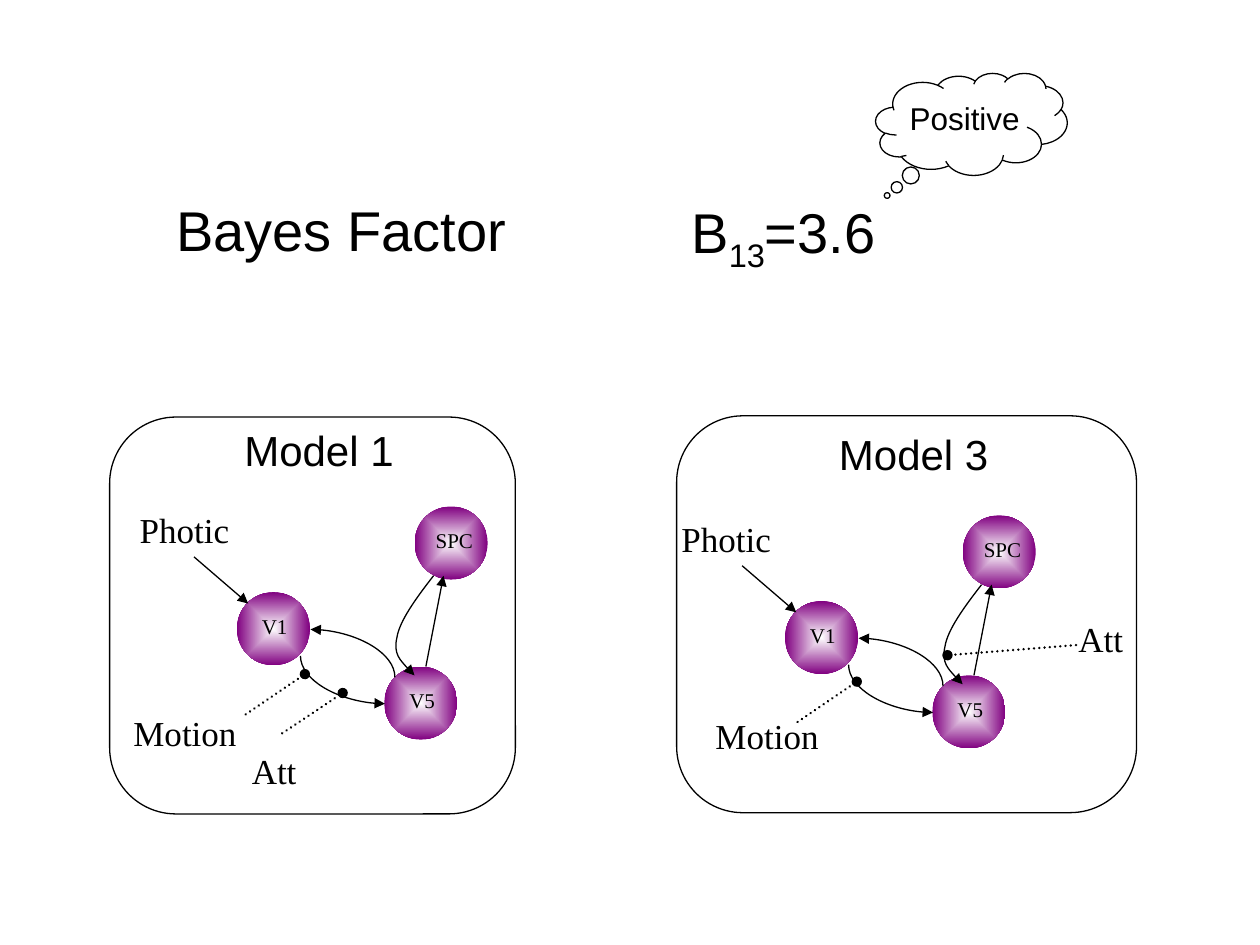
from lxml.etree import SubElement
from pptx import Presentation
from pptx.dml.color import RGBColor
from pptx.enum.dml import MSO_LINE
from pptx.enum.shapes import MSO_CONNECTOR, MSO_SHAPE
from pptx.enum.text import MSO_ANCHOR, MSO_AUTO_SIZE, PP_ALIGN
from pptx.oxml.ns import qn
from pptx.util import Inches, Pt

BLACK = RGBColor(0x00, 0x00, 0x00)
WHITE = RGBColor(0xFF, 0xFF, 0xFF)
PURPLE = RGBColor(0x80, 0x00, 0x80)
SERIF = "Times New Roman"

# Node name: left, top, label left offset, label width
NODES = {
    "V1": (1.88, 4.70, 0.10, 0.42),
    "V5": (3.05, 5.29, 0.10, 0.42),
    "SPC": (3.29, 4.02, 0.07, 0.53),
}
NODE_SIZE = 0.58
ARROWS = [(3.38, 5.29, 3.52, 4.57), (1.54, 4.42, 1.97, 4.79)]
# Unrotated left and top, rotation of the curves between V1 and V5
CURVES = [(2.53, 5.06, 270), (2.61, 4.85, 90)]
# Start point and Bezier points of the curve from SPC to V5
SPC_CURVE = [(3.44, 4.57), (3.30, 4.75), (3.17, 4.93), (3.15, 5.06),
             (3.12, 5.19), (3.21, 5.28), (3.29, 5.36)]

MODELS = [
    {
        "offset": (0, 0),
        "panel": (0.87, 3.31, 3.22, 3.15),
        "title": ("Model 1", 1.84, 3.32),
        "inputs": [("Motion", 0.96, 5.60, 1.02), ("Photic", 1.01, 3.99, 0.91),
                   ("Att", 1.90, 5.90, 0.56)],
        "modulators": [(1.95, 5.67, 2.42, 5.35), (2.24, 5.82, 2.72, 5.50)],
    },
    {
        "offset": (4.35, 0.07),
        "panel": (5.37, 3.30, 3.65, 3.15),
        "title": ("Model 3", 6.56, 3.35),
        "inputs": [("Motion", 5.58, 5.62, 1.02), ("Photic", 5.31, 4.06, 0.91),
                   ("Att", 8.46, 4.85, 0.56)],
        "modulators": [(6.33, 5.73, 6.80, 5.41), (8.54, 5.12, 7.52, 5.20)],
    },
]

presentation = Presentation()
presentation.slide_width = Inches(10)
presentation.slide_height = Inches(7.5)
slide = presentation.slides.add_slide(presentation.slide_layouts[5])
shapes = slide.shapes


def add_label(text, left, top, width, height, size, font="Arial"):
    label = shapes.add_textbox(Inches(left), Inches(top), Inches(width), Inches(height))
    label.text_frame.word_wrap = False
    label.text_frame.auto_size = MSO_AUTO_SIZE.SHAPE_TO_FIT_TEXT
    paragraph = label.text_frame.paragraphs[0]
    paragraph.text = text
    paragraph.font.size = Pt(size)
    paragraph.font.name = font
    paragraph.font.color.rgb = BLACK
    return label


def style_line(shape, head=None, width=0.75):
    shape.line.color.rgb = BLACK
    shape.line.width = Pt(width)
    properties = shape._element.spPr
    if head:
        SubElement(properties.find(qn("a:ln")), qn("a:tailEnd"), type=head)
    if properties.find(qn("a:effectLst")) is None:
        SubElement(properties, qn("a:effectLst"))


# Slide title
title = shapes.title
title.left, title.top = Inches(1.3), Inches(1.5)
title.width, title.height = Inches(4.18), Inches(0.63)
title.text_frame.text = "Bayes Factor"
title.text_frame.vertical_anchor = MSO_ANCHOR.TOP
title.text_frame.auto_size = MSO_AUTO_SIZE.SHAPE_TO_FIT_TEXT
title.text_frame.paragraphs[0].alignment = PP_ALIGN.LEFT
title_font = title.text_frame.paragraphs[0].runs[0].font
title_font.size = Pt(32)
title_font.name = "Arial"
title_font.color.rgb = BLACK

for model in MODELS:
    dx, dy = model["offset"]

    # Brain regions
    for name, (left, top, label_left, label_width) in NODES.items():
        node = shapes.add_shape(MSO_SHAPE.OVAL, Inches(left + dx), Inches(top + dy),
                                Inches(NODE_SIZE), Inches(NODE_SIZE))
        node.shadow.inherit = False
        node.line.fill.background()
        node.fill.gradient()
        for stop, color, position in zip(node.fill.gradient_stops, (WHITE, PURPLE), (0, 1)):
            stop.color.rgb = color
            stop.position = position
        gradient = node._element.spPr.find(qn("a:gradFill"))
        gradient.remove(gradient.find(qn("a:lin")))
        path = SubElement(gradient, qn("a:path"), path="shape")
        SubElement(path, qn("a:fillToRect"), l="50000", t="50000", r="50000", b="50000")
        add_label(name, left + label_left + dx, top + 0.12 + dy, label_width, 0.3, 12, SERIF)

    # Inputs
    for text, left, top, width in model["inputs"]:
        label = add_label(text, left, top, width, 0.43, 20, SERIF)
        label.fill.solid()
        label.fill.fore_color.rgb = WHITE

    # Curved arrows between V1 and V5
    for left, top, rotation in CURVES:
        curve = shapes.add_connector(
            MSO_CONNECTOR.CURVE, Inches(left + dx), Inches(top + dy),
            Inches(left + 0.38 + dx), Inches(top + 0.67 + dy))
        properties = curve._element.spPr
        properties.find(qn("a:prstGeom")).set("prst", "curvedConnector2")
        transform = properties.find(qn("a:xfrm"))
        transform.set("rot", str(rotation * 60000))
        transform.set("flipH", "1")
        style_line(curve, "triangle")

    # Curved arrow from SPC to V5: each three points become one Bezier segment
    points = [(Inches(x + dx), Inches(y + dy)) for x, y in SPC_CURVE]
    builder = shapes.build_freeform(*points[0])
    builder.add_line_segments(points[1:], close=False)
    curve = builder.convert_to_shape()
    curve.shadow.inherit = False
    curve.fill.background()
    outline = curve._element.spPr.find(".//" + qn("a:path"))
    segments = outline.findall(qn("a:lnTo"))
    for start in range(0, len(segments), 3):
        bezier = SubElement(outline, qn("a:cubicBezTo"))
        for segment in segments[start:start + 3]:
            bezier.append(segment[0])
            outline.remove(segment)
    style_line(curve, "triangle")

    # Straight arrows
    for x1, y1, x2, y2 in ARROWS:
        arrow = shapes.add_connector(MSO_CONNECTOR.STRAIGHT, Inches(x1 + dx), Inches(y1 + dy),
                                     Inches(x2 + dx), Inches(y2 + dy))
        style_line(arrow, "triangle")

    # Dotted modulatory links with round dots
    for ends in model["modulators"]:
        link = shapes.add_connector(MSO_CONNECTOR.STRAIGHT, *[Inches(end) for end in ends])
        link.line.dash_style = MSO_LINE.ROUND_DOT
        style_line(link, "oval", 1.5)
        link._element.spPr.find(qn("a:ln")).set("cap", "rnd")

    # Model name and frame
    text, left, top = model["title"]
    add_label(text, left, top, 1.39, 0.5, 24)
    panel = shapes.add_shape(MSO_SHAPE.ROUNDED_RECTANGLE,
                             *[Inches(length) for length in model["panel"]])
    panel.adjustments[0] = 0.167
    panel.fill.background()
    panel.shadow.inherit = False
    style_line(panel)

# Bayes factor value
value = add_label("B", 5.39, 1.52, 1.7, 0.63, 32)
paragraph = value.text_frame.paragraphs[0]
subscript = paragraph.add_run()
subscript.text = "13"
subscript.font._element.set("baseline", "-25000")
paragraph.add_run().text = "=3.6"

# Verdict in a thought cloud
add_label("Positive", 7.12, 0.74, 1.08, 0.4, 18)
cloud = shapes.add_shape(MSO_SHAPE.CLOUD_CALLOUT, Inches(6.95), Inches(0.58),
                         Inches(1.52), Inches(0.81))
cloud.adjustments[0] = -0.44
cloud.adjustments[1] = 0.7
cloud.fill.background()
cloud.shadow.inherit = False
style_line(cloud)

presentation.save("out.pptx")
